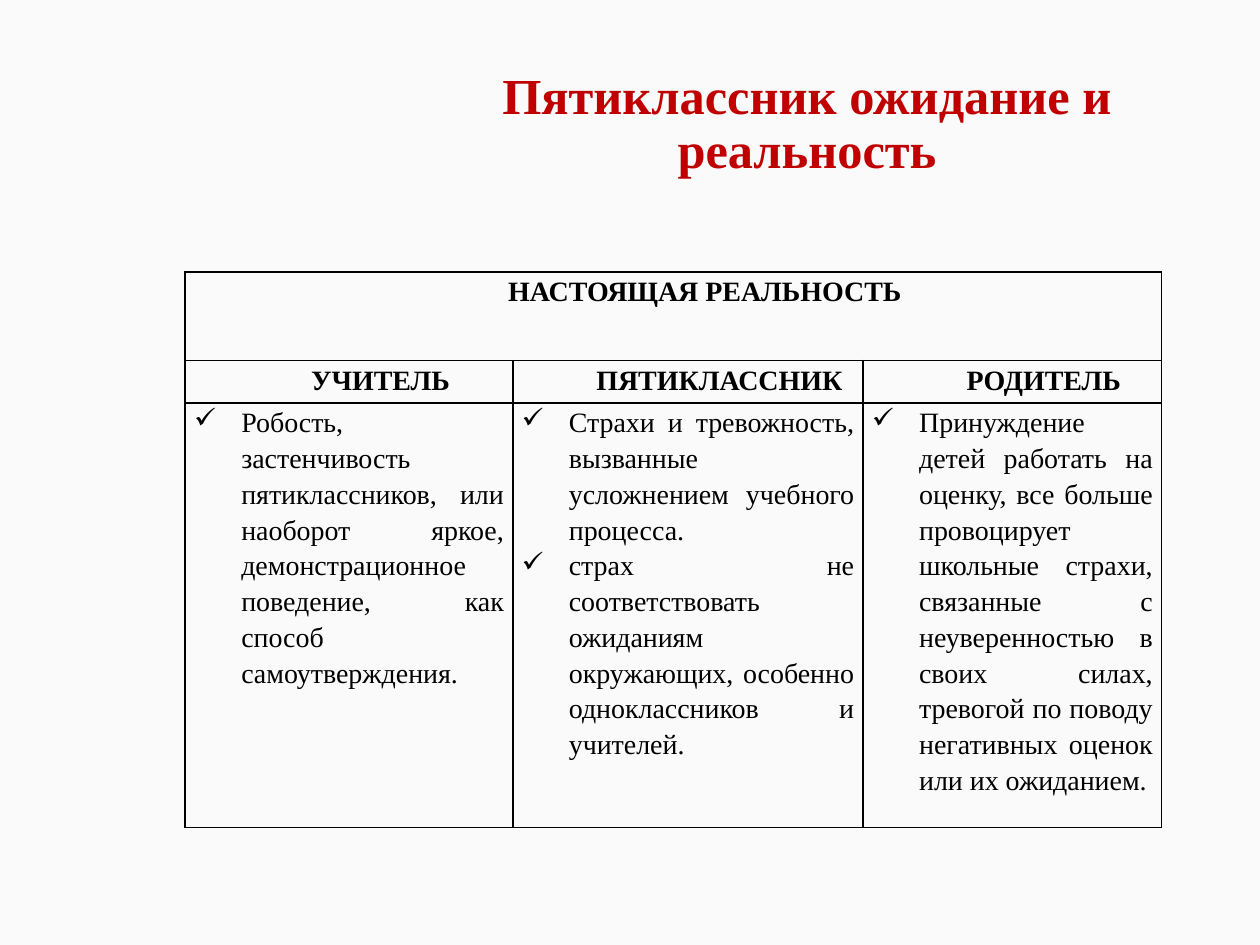
from lxml import etree
from pptx import Presentation
from pptx import util as u
from pptx.dml.color import RGBColor
from pptx.enum import text
from pptx.oxml import ns

THEME = {
    "font": "Times New Roman",
    "background": RGBColor(0xFA, 0xFA, 0xFA),
    "title": RGBColor(0xC0, 0x00, 0x00),
    "ink": RGBColor(0, 0, 0),
    "title_size": 28.8,
    "body_size": 16,
    "border": 1,
}
COLUMNS = [2.6, 2.78, 2.37]
ROWS = [0.7, 0.34, 3.25]
HEADING = "НАСТОЯЩАЯ РЕАЛЬНОСТЬ"
VIEWS = {
    "УЧИТЕЛЬ": [
        "Робость, застенчивость пятиклассников, или наоборот яркое, "
        "демонстрационное поведение, как способ самоутверждения.",
    ],
    "ПЯТИКЛАССНИК": [
        "Страхи и тревожность, вызванные усложнением учебного процесса.",
        "страх не соответствовать ожиданиям окружающих, особенно "
        "одноклассников и учителей.",
    ],
    "РОДИТЕЛЬ": [
        "Принуждение детей работать на оценку, все больше провоцирует "
        "школьные страхи, связанные с неуверенностью в своих силах, тревогой "
        "по поводу негативных оценок или их ожиданием.",
    ],
}


def style(paragraph, size, color, bold, align, spacing):
    paragraph.alignment = align
    paragraph.line_spacing = spacing
    font = paragraph.font
    font.name, font.size, font.bold = THEME["font"], u.Pt(size), bold
    font.color.rgb = color
    for run in paragraph.runs:
        run.font.name, run.font.size, run.font.bold = THEME["font"], u.Pt(size), bold
        run.font.color.rgb = color


def fill_cell(cell, lines, bulleted):
    """Write the lines into a bordered cell, as check-marked items or a heading."""
    cell.margin_left = cell.margin_right = u.Inches(0.07)
    cell.margin_top = cell.margin_bottom = 0
    properties = cell._tc.get_or_add_tcPr()
    for side in ("lnL", "lnR", "lnT", "lnB"):
        line = etree.SubElement(properties, ns.qn(f"a:{side}"),
                                w=str(u.Pt(THEME["border"])))
        solid = etree.SubElement(line, ns.qn("a:solidFill"))
        etree.SubElement(solid, ns.qn("a:srgbClr"), val=str(THEME["ink"]))
    cell.fill.background()

    cell.text_frame.text = "\n".join(lines)
    for paragraph in cell.text_frame.paragraphs:
        layout = paragraph._p.get_or_add_pPr()
        layout.set("marL", str(u.Inches(0.375 if bulleted else 0.5)))
        layout.set("indent", str(u.Inches(-0.375 if bulleted else 0)))
        if bulleted:
            etree.SubElement(layout, ns.qn("a:buChar"), char="✓")
        align = text.PP_ALIGN.JUSTIFY if bulleted else text.PP_ALIGN.CENTER
        style(paragraph, THEME["body_size"], THEME["ink"], not bulleted, align, 1.15)


deck = Presentation()
deck.slide_width, deck.slide_height = u.Inches(10), u.Inches(7.5)
slide = deck.slides.add_slide(deck.slide_layouts[6])
slide.background.fill.solid()
slide.background.fill.fore_color.rgb = THEME["background"]

title = slide.shapes.add_textbox(
    u.Inches(2.94), u.Inches(0.56), u.Inches(6.93), u.Inches(0.87)).text_frame
title.word_wrap = True
title.vertical_anchor = text.MSO_ANCHOR.MIDDLE
title.text = "Пятиклассник ожидание и реальность"
style(title.paragraphs[0], THEME["title_size"], THEME["title"], True,
      text.PP_ALIGN.CENTER, 0.9)

reality = slide.shapes.add_table(
    len(ROWS), len(COLUMNS), u.Inches(1.47), u.Inches(2.16),
    u.Inches(sum(COLUMNS)), u.Inches(sum(ROWS))).table
reality.first_row = reality.horz_banding = False
for column, width in zip(reality.columns, COLUMNS):
    column.width = u.Inches(width)
for row, height in zip(reality.rows, ROWS):
    row.height = u.Inches(height)

reality.cell(0, 0).merge(reality.cell(0, len(COLUMNS) - 1))
for index, (person, worries) in enumerate(VIEWS.items()):
    fill_cell(reality.cell(0, index), [HEADING] if index == 0 else [], False)
    fill_cell(reality.cell(1, index), [person], False)
    fill_cell(reality.cell(2, index), worries, True)

deck.save("out.pptx")
